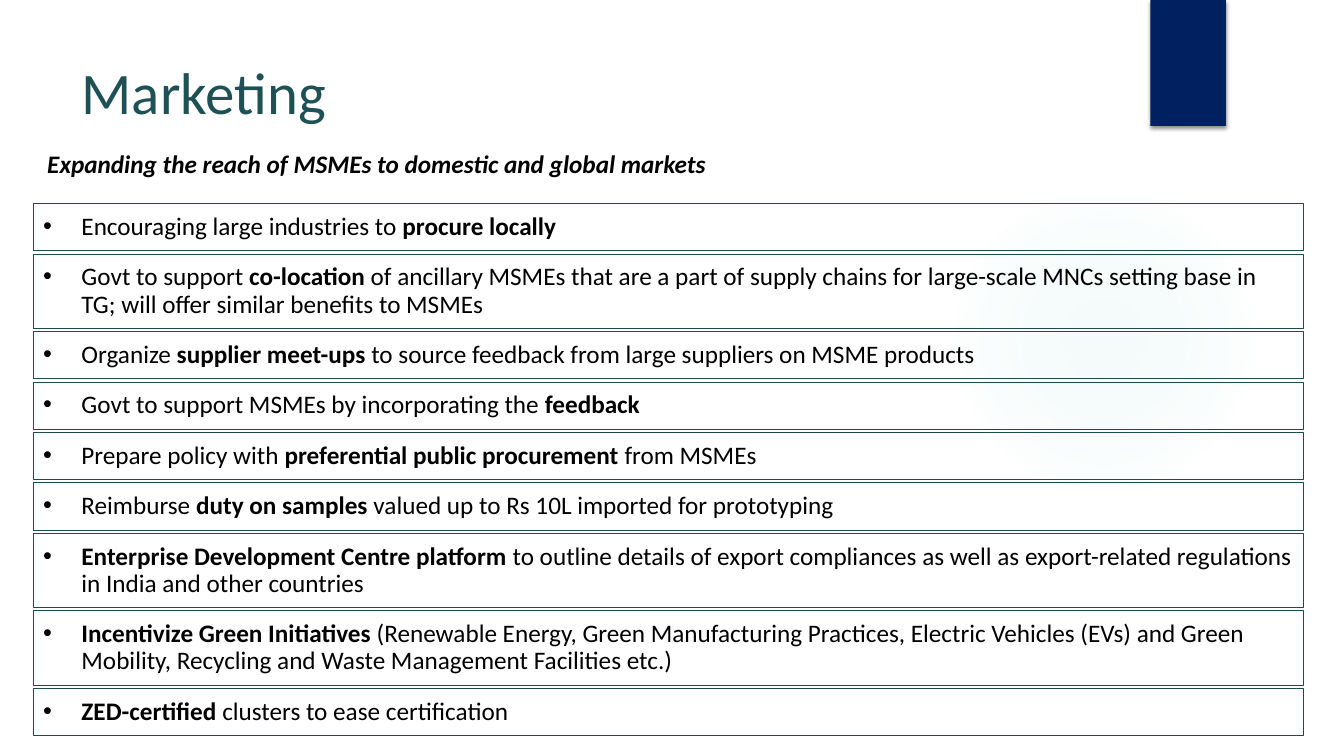
from dataclasses import dataclass

from lxml.etree import SubElement
from pptx import Presentation
from pptx.dml.color import RGBColor
from pptx.enum.shapes import MSO_SHAPE as Preset
from pptx.enum.text import MSO_ANCHOR as Anchor, MSO_AUTO_SIZE as AutoSize, PP_ALIGN as Align
from pptx.oxml import parse_xml
from pptx.oxml.ns import nsdecls, qn
from pptx.util import Inches, Pt

FONT = "Calibri"
COLORS = {"title": "1E5155", "text": "000000", "border": "1C4D4A", "ribbon": "002060", "glow": "7CCEC9"}
ROW_LEFT, ROW_WIDTH, ROW_TOP, ROW_GAP = 0.33, 12.6, 2.02, 0.03
ROW_HEIGHTS = {1: 0.47, 2: 0.74}
INDENT = Inches(0.38)


@dataclass
class Measure:
    """A boxed bullet whose bold words stand between asterisks."""
    text: str
    lines: int = 1


MEASURES = [
    Measure("Encouraging large industries to *procure locally*"),
    Measure("Govt to support *co-location* of ancillary MSMEs that are a part of supply chains for "
            "large-scale MNCs setting base in TG; will offer similar benefits to MSMEs", 2),
    Measure("Organize *supplier meet-ups *to source feedback from large suppliers on MSME products"),
    Measure("Govt to support MSMEs by incorporating the *feedback*"),
    Measure("Prepare policy with *preferential public procurement *from MSMEs"),
    Measure("Reimburse *duty on samples* valued up to Rs 10L imported for prototyping"),
    Measure("*Enterprise Development Centre platform *to outline details of export compliances "
            "as well as export-related regulations in India and other countries", 2),
    Measure("*Incentivize Green Initiatives *(Renewable Energy, Green Manufacturing Practices, "
            "Electric Vehicles (EVs) and Green Mobility, Recycling and Waste Management Facilities etc.)", 2),
    Measure("*ZED-certified *clusters to ease certification"),
]


def color(name: str) -> RGBColor:
    """Look up a named colour."""
    return RGBColor.from_string(COLORS[name])


def format_span(span, size: float, name: str, bold: bool = False, italic: bool = False) -> None:
    """Set the font of one run."""
    span.font.name = FONT
    span.font.size = Pt(size)
    span.font.color.rgb = color(name)
    span.font.bold = bold
    span.font.italic = italic


def add_plain_shape(page, preset, left: float, top: float, width: float, height: float):
    """Add a shape without fill, line or shadow."""
    shape = page.shapes.add_shape(preset, Inches(left), Inches(top), Inches(width), Inches(height))
    shape.shadow.inherit = False
    shape.fill.background()
    shape.line.fill.background()
    return shape


def add_glow(page) -> None:
    """Draw the faint round glow."""
    glow = add_plain_shape(page, Preset.OVAL, 9.41, 1.83, 3.08, 3.08)
    stops = "".join(
        f'<a:gs pos="{place * 1000}"><a:srgbClr val="{COLORS["glow"]}">'
        f'<a:alpha val="{alpha * 1000}"/></a:srgbClr></a:gs>'
        for place, alpha in [(0, 7), (36, 6), (69, 0)])
    gradient = parse_xml(
        f'<a:gradFill {nsdecls("a")} rotWithShape="1"><a:gsLst>{stops}</a:gsLst><a:path path="circle">'
        '<a:fillToRect l="50000" t="50000" r="50000" b="50000"/></a:path></a:gradFill>')
    properties = glow.element.spPr
    properties.replace(properties.find(qn("a:noFill")), gradient)


def add_ribbon(page) -> None:
    """Draw the shadowed block at the top edge."""
    ribbon = add_plain_shape(page, Preset.RECTANGLE, 11.41, 0, 0.75, 1.25)
    ribbon.fill.solid()
    ribbon.fill.fore_color.rgb = color("ribbon")
    effects = ribbon.element.spPr.find(qn("a:effectLst"))
    effects.append(parse_xml(
        f'<a:outerShdw {nsdecls("a")} blurRad="{Pt(3)}" dist="{Pt(2)}" dir="5400000" rotWithShape="0">'
        '<a:srgbClr val="000000"><a:alpha val="45000"/></a:srgbClr></a:outerShdw>'))


def add_title(page, text: str) -> None:
    """Place and format the title."""
    title = page.shapes.title
    title.left, title.top, title.width, title.height = map(Inches, (0.71, 0.5, 10.29, 1.53))
    frame = title.text_frame
    frame.text = text
    frame.auto_size = AutoSize.NONE
    frame.vertical_anchor = Anchor.TOP
    para = frame.paragraphs[0]
    para.alignment = Align.LEFT
    format_span(para.runs[0], 42, "title")


def add_subtitle(page, text: str) -> None:
    """Add the line under the title."""
    box = page.shapes.add_textbox(Inches(0.37), Inches(1.42), Inches(9.29), Inches(0.4))
    frame = box.text_frame
    frame.word_wrap = True
    frame.auto_size = AutoSize.SHAPE_TO_FIT_TEXT
    frame.text = text
    format_span(frame.paragraphs[0].runs[0], 18, "text", bold=True, italic=True)


def add_bullet(para) -> None:
    """Give a paragraph a hanging bullet."""
    properties = para._p.get_or_add_pPr()
    properties.set("marL", str(INDENT))
    properties.set("indent", str(-INDENT))
    tint = SubElement(properties, qn("a:buClr"))
    SubElement(tint, qn("a:srgbClr"), val=COLORS["text"])
    SubElement(properties, qn("a:buFont"), typeface="Arial")
    SubElement(properties, qn("a:buChar"), char="•")


def add_measure(page, measure: Measure, top: float) -> None:
    """Draw one outlined row with its text."""
    row = add_plain_shape(page, Preset.RECTANGLE, ROW_LEFT, top, ROW_WIDTH, ROW_HEIGHTS[measure.lines])
    row.line.color.rgb = color("border")
    row.line.width = Pt(0.75)
    frame = row.text_frame
    frame.word_wrap = True
    frame.auto_size = AutoSize.SHAPE_TO_FIT_TEXT
    frame.vertical_anchor = Anchor.MIDDLE
    frame.margin_left = frame.margin_right = frame.margin_top = frame.margin_bottom = Inches(0.1)
    para = frame.paragraphs[0]
    add_bullet(para)
    para.alignment = Align.LEFT
    para.line_spacing = 0.9
    for index, words in enumerate(measure.text.split("*")):
        if words:
            span = para.add_run()
            span.text = words
            format_span(span, 18, "text", bold=index % 2 == 1)


def main() -> None:
    """Build and save the slide."""
    deck = Presentation()
    deck.slide_width, deck.slide_height = Inches(13.33), Inches(7.5)
    page = deck.slides.add_slide(deck.slide_layouts[5])
    add_glow(page)
    add_ribbon(page)
    add_title(page, "Marketing")
    add_subtitle(page, "Expanding the reach of MSMEs to domestic and global markets")
    top = ROW_TOP
    for measure in MEASURES:
        add_measure(page, measure, top)
        top += ROW_HEIGHTS[measure.lines] + ROW_GAP
    deck.save("out.pptx")


if __name__ == "__main__":
    main()
